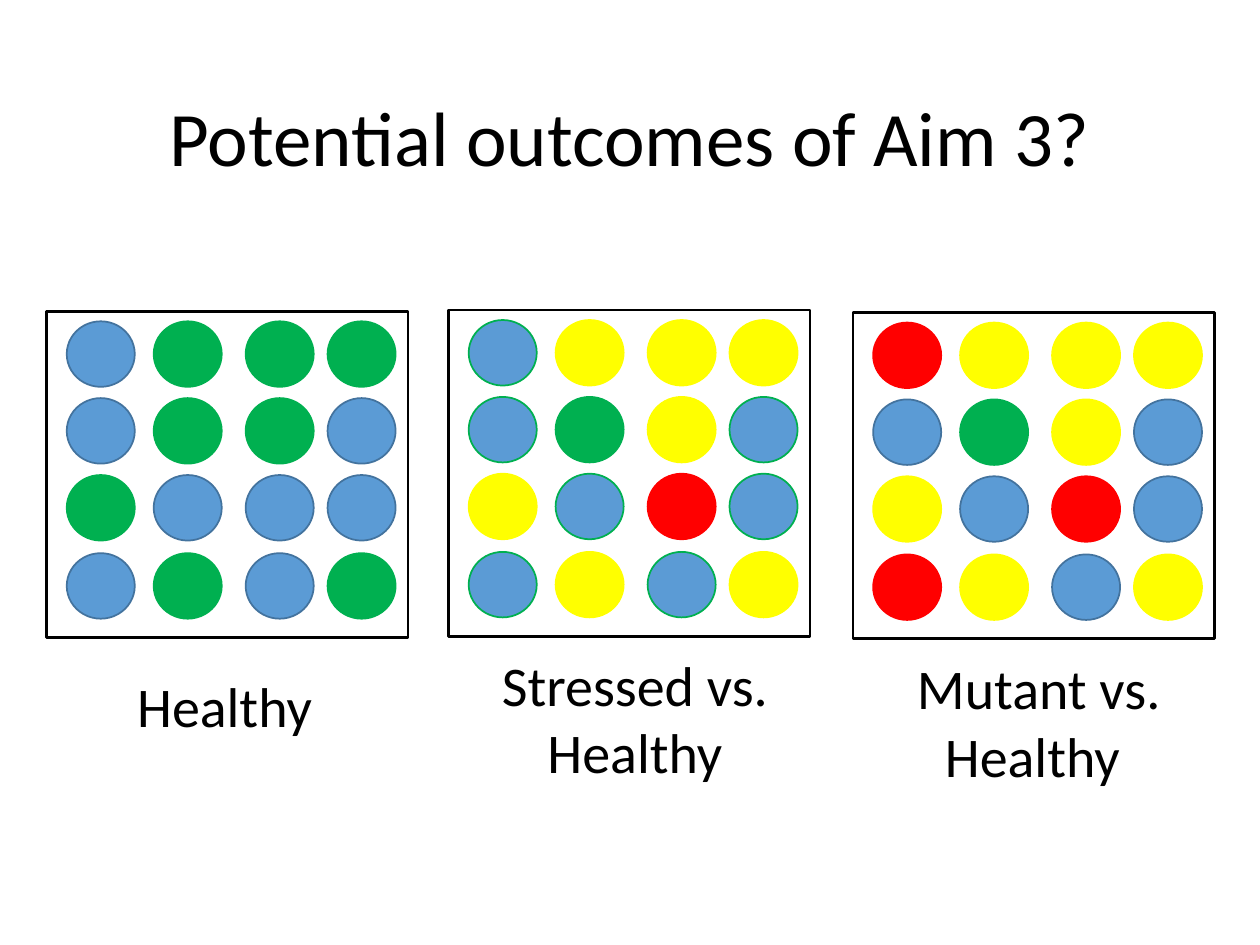
from dataclasses import dataclass

from pptx import Presentation
from pptx.dml.color import RGBColor
from pptx.enum.shapes import MSO_SHAPE
from pptx.enum.text import MSO_ANCHOR, PP_ALIGN
from pptx.util import Inches, Pt

BLACK = RGBColor(0x00, 0x00, 0x00)
WHITE = RGBColor(0xFF, 0xFF, 0xFF)
BLUE = RGBColor(0x5B, 0x9B, 0xD5)
DARK_BLUE = RGBColor(0x43, 0x73, 0x9E)
GREEN = RGBColor(0x00, 0xB0, 0x50)
YELLOW = RGBColor(0xFF, 0xFF, 0x00)
RED = RGBColor(0xFF, 0x00, 0x00)

FONT = "Calibri"
SPOT_COLORS = {"B": BLUE, "G": GREEN, "Y": YELLOW, "R": RED}

# Spot offsets from the corner of a panel, in inches
COLUMNS = (0.16, 0.85, 1.58, 2.23)
ROWS = (0.08, 0.69, 1.3, 1.92)


@dataclass
class Panel:
    left: float
    top: float
    spots: tuple[str, ...]  # one letter per spot, one string per row
    blue_outline: RGBColor


@dataclass
class Caption:
    left: float
    top: float
    width: float
    height: float
    lines: tuple[str, ...]
    align: PP_ALIGN = PP_ALIGN.CENTER
    wrap: bool = True


PANELS = (
    Panel(0.37, 2.47, ("BGGG", "BGGB", "GBBB", "BGBG"), DARK_BLUE),
    Panel(3.56, 2.46, ("BYYY", "BGYB", "YBRB", "BYBY"), GREEN),
    Panel(6.77, 2.48, ("RYYY", "BGYB", "YBRB", "RYBY"), DARK_BLUE),
)
CAPTIONS = (
    Caption(0.99, 5.28, 1.74, 0.64, ("Healthy",), PP_ALIGN.LEFT),
    Caption(3.65, 5.11, 2.78, 1.18, ("Stressed vs.", "Healthy")),
    Caption(7.16, 5.14, 2.17, 1.18, ("Mutant vs. ", "Healthy "), wrap=False),
)


def format_text(frame, size: float) -> None:
    for para in frame.paragraphs:
        for span in para.runs:
            span.font.name = FONT
            span.font.size = Pt(size)
            span.font.color.rgb = BLACK


def add_outlined(shapes, kind: MSO_SHAPE, left: float, top: float, width: float,
                 height: float, fill: RGBColor, line: RGBColor, weight: float) -> None:
    shape = shapes.add_shape(kind, Inches(left), Inches(top), Inches(width), Inches(height))
    shape.shadow.inherit = False
    shape.fill.solid()
    shape.fill.fore_color.rgb = fill
    shape.line.color.rgb = line
    shape.line.width = Pt(weight)


def add_panel(page, panel: Panel) -> None:
    shapes = page.shapes.add_group_shape().shapes
    add_outlined(shapes, MSO_SHAPE.RECTANGLE, panel.left, panel.top, 2.87, 2.59,
                 WHITE, BLACK, 1.5)
    for row, letters in zip(ROWS, panel.spots):
        for column, letter in zip(COLUMNS, letters):
            fill = SPOT_COLORS[letter]
            line = panel.blue_outline if letter == "B" else fill
            add_outlined(shapes, MSO_SHAPE.OVAL, panel.left + column, panel.top + row,
                         0.54, 0.52, fill, line, 1)


def add_caption(page, caption: Caption) -> None:
    box = page.shapes.add_textbox(Inches(caption.left), Inches(caption.top),
                                  Inches(caption.width), Inches(caption.height))
    frame = box.text_frame
    frame.word_wrap = caption.wrap
    frame.text = "\n".join(caption.lines)
    for para in frame.paragraphs:
        para.alignment = caption.align
    format_text(frame, 32)


def add_title(page, text: str) -> None:
    title = page.shapes.title
    title.left, title.top = Inches(0.69), Inches(0.4)
    title.width, title.height = Inches(8.62), Inches(1.45)
    frame = title.text_frame
    frame.text = text
    frame.vertical_anchor = MSO_ANCHOR.MIDDLE
    frame.paragraphs[0].alignment = PP_ALIGN.CENTER
    frame.paragraphs[0].line_spacing = 0.9
    format_text(frame, 44)


def main() -> None:
    deck = Presentation()
    deck.slide_width, deck.slide_height = Inches(10), Inches(7.5)
    page = deck.slides.add_slide(deck.slide_layouts[5])

    add_title(page, "Potential outcomes of Aim 3?")

    # Spot arrays, then their captions
    for panel in PANELS:
        add_panel(page, panel)
    for caption in CAPTIONS:
        add_caption(page, caption)

    deck.save("out.pptx")


if __name__ == "__main__":
    main()
